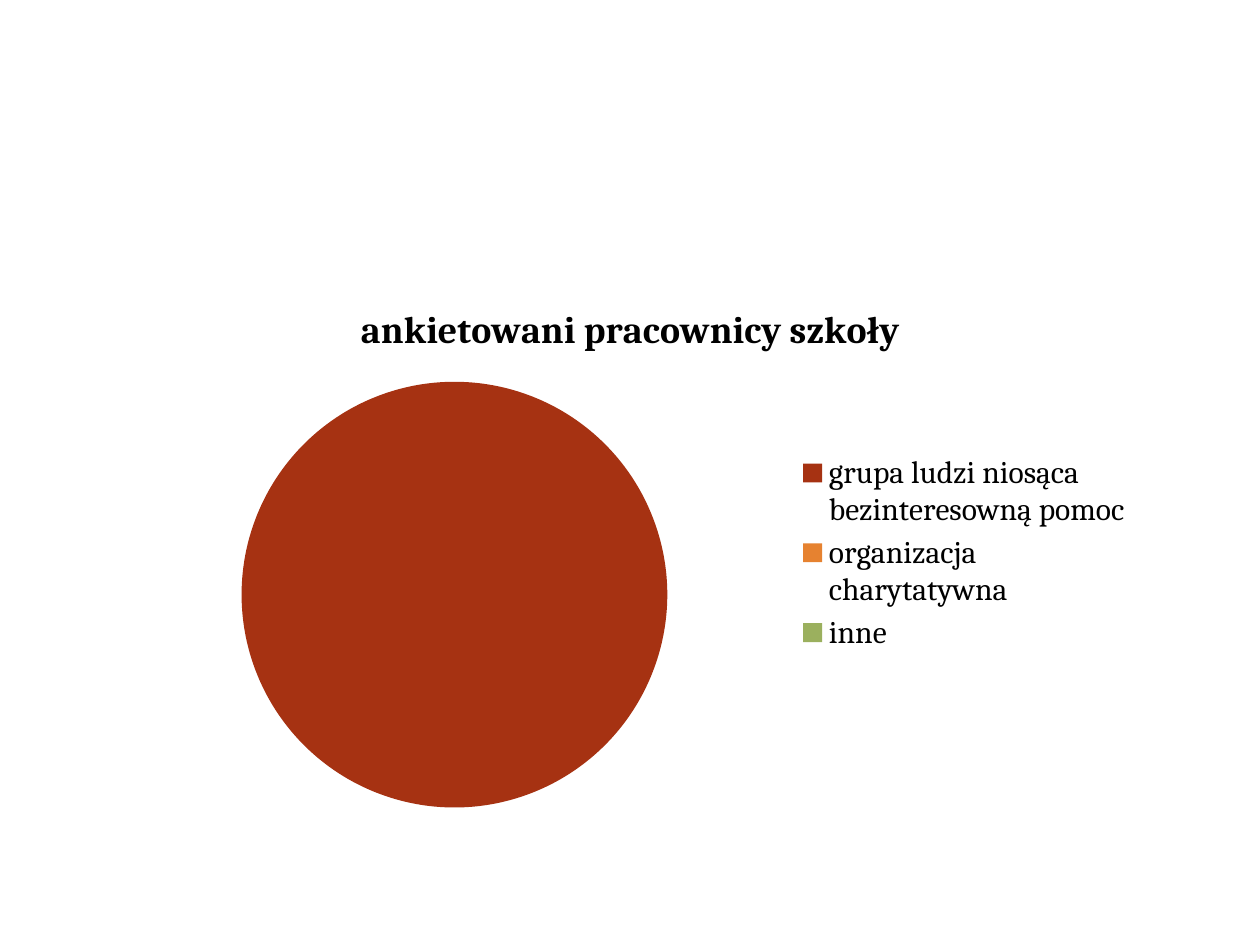
from dataclasses import dataclass

from pptx import Presentation
from pptx.chart.data import CategoryChartData as ChartData
from pptx.dml.color import RGBColor as Rgb
from pptx.enum.chart import XL_CHART_TYPE as Kind, XL_LEGEND_POSITION as Side
from pptx.util import Cm, Pt


@dataclass(frozen=True)
class Theme:
    face: str = "Cambria"
    ink: str = "000000"
    paper: str = "FFFFFF"
    slices: tuple = ("A63212", "E68230", "9BB05E")
    body: float = 18
    head: float = 21.6


THEME = Theme()
TITLE = "ankietowani pracownicy szkoły"
ANSWERS = {
    "grupa ludzi niosąca bezinteresowną pomoc": 100,
    "organizacja charytatywna": 0,
    "inne": 0,
}


def style(font, size=THEME.body, bold=False, color=THEME.ink):
    font.name = THEME.face
    font.size = Pt(size)
    font.bold = bold
    font.color.rgb = Rgb.from_string(color)


def write(frame, text, **form):
    """Put text in the frame's first paragraph, formatted by style()."""
    run = frame.paragraphs[0].add_run()
    run.text = text
    style(run.font, **form)


def add_pie(slide, box, title, answers):
    data = ChartData(number_format="General")
    data.categories = list(answers)
    data.add_series(title, list(answers.values()))
    chart = slide.shapes.add_chart(Kind.PIE, *box, data).chart
    style(chart.font)

    chart.has_title = True
    write(chart.chart_title.text_frame, title, size=THEME.head, bold=True)
    chart.chart_title.include_in_layout = False

    chart.has_legend = True
    chart.legend.position = Side.RIGHT
    chart.legend.include_in_layout = False
    style(chart.legend.font)

    plot = chart.plots[0]
    plot.vary_by_categories = True
    for i, color in enumerate(THEME.slices):
        part = plot.series[0].points[i].format
        part.fill.solid()
        part.fill.fore_color.rgb = Rgb.from_string(color)
        part.line.fill.background()


def main():
    deck = Presentation()
    deck.slide_width, deck.slide_height = Cm(25.4), Cm(19.05)
    slide = deck.slides.add_slide(deck.slide_layouts[6])
    fill = slide.background.fill
    fill.solid()
    fill.fore_color.rgb = Rgb.from_string(THEME.paper)
    box = Cm(2.34), Cm(5.66), Cm(20.75), Cm(10.97)
    add_pie(slide, box, TITLE, ANSWERS)
    deck.save("out.pptx")


if __name__ == "__main__":
    main()
